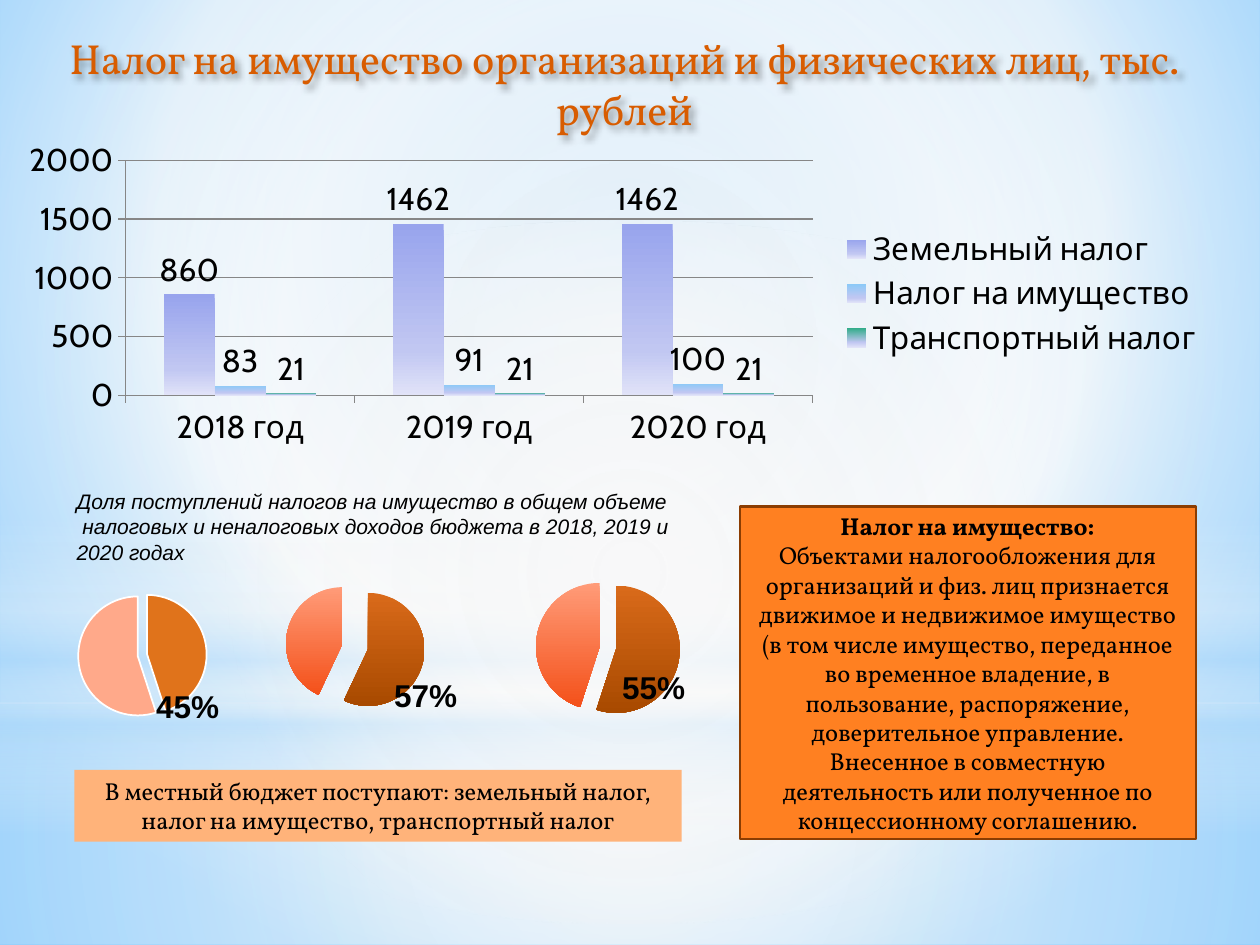
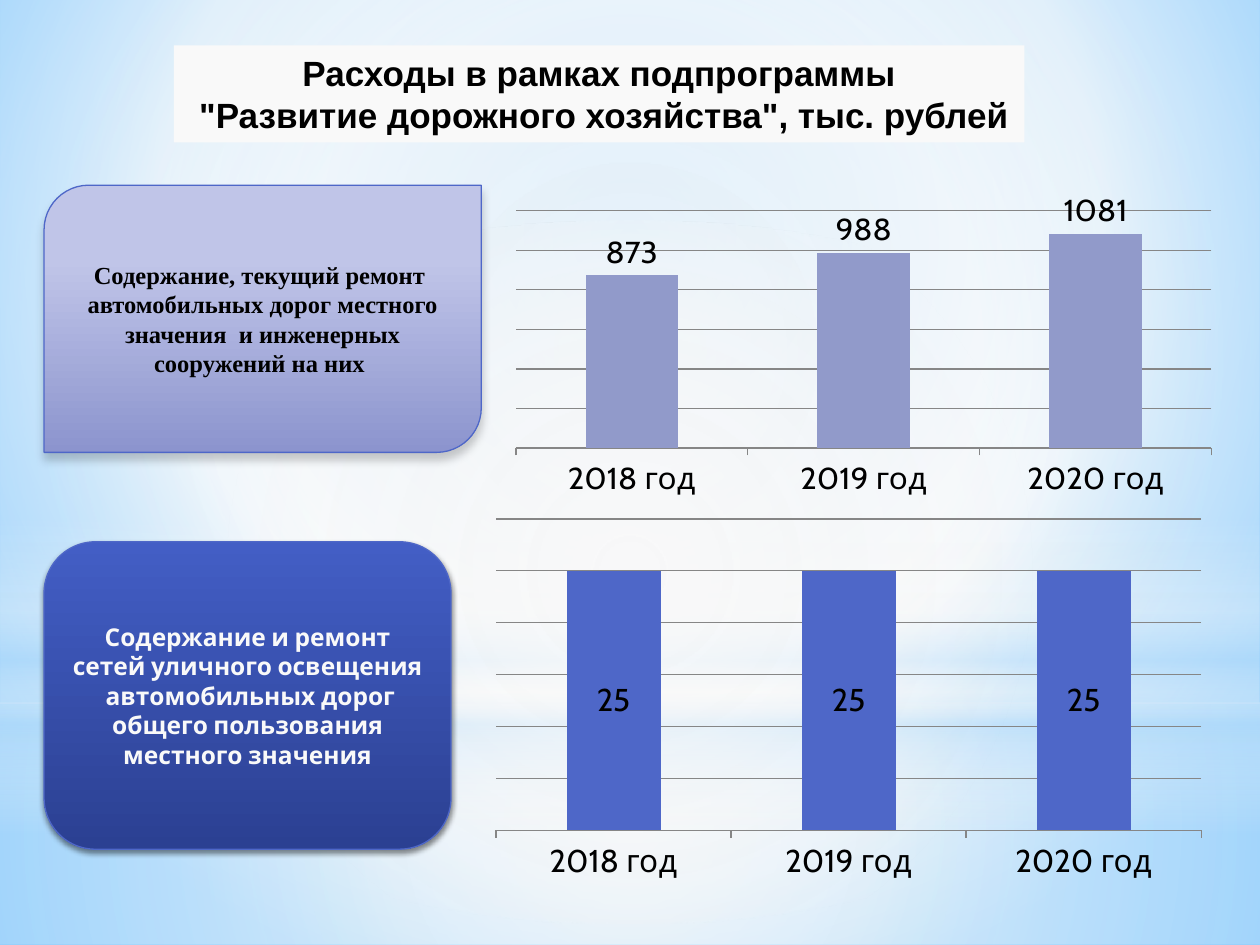
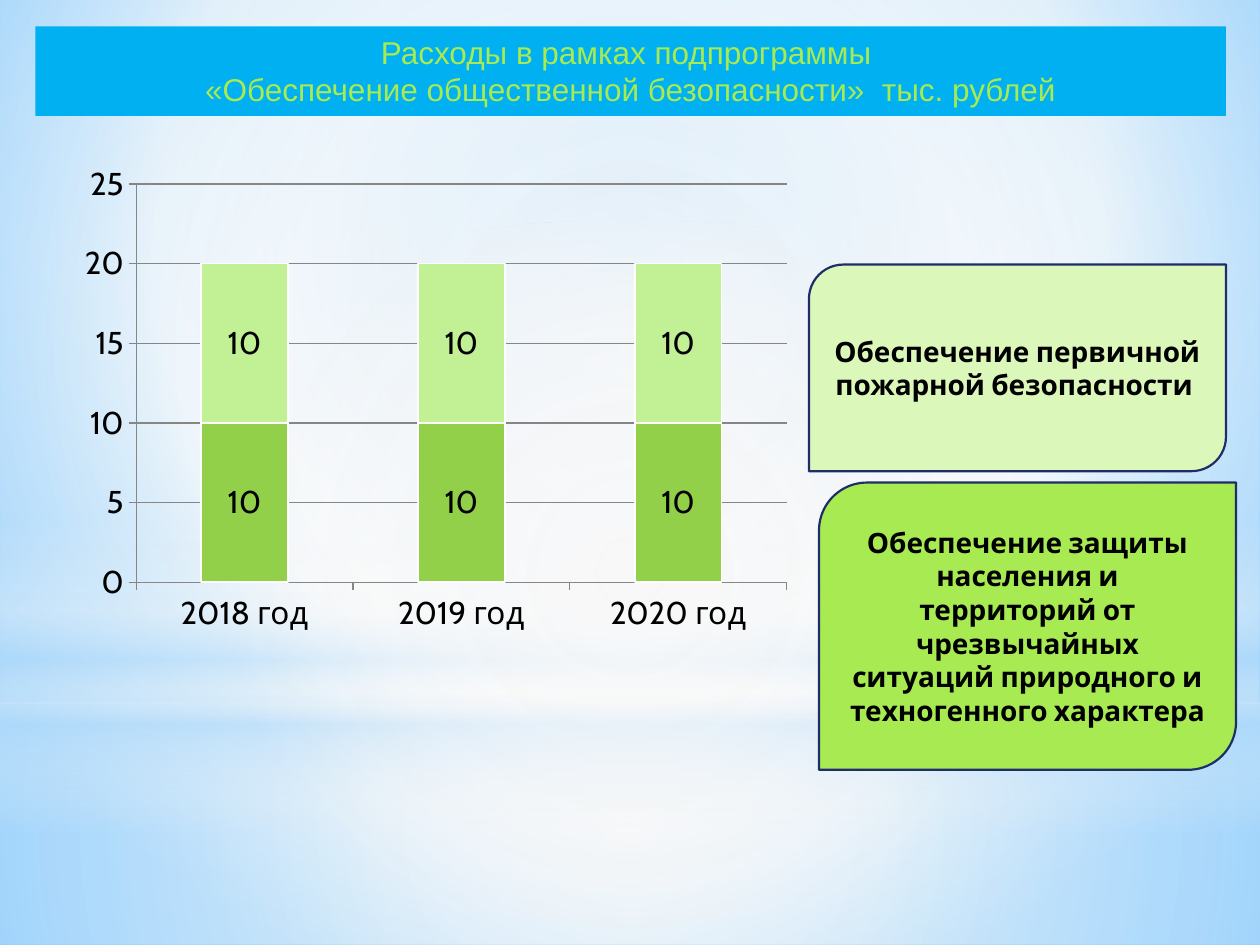
"""Build three budget slides about taxes, roads and public safety."""
from lxml import etree
from pptx import Presentation
from pptx.chart.data import CategoryChartData
from pptx.dml.color import RGBColor
from pptx.enum.chart import XL_CHART_TYPE, XL_LABEL_POSITION, XL_LEGEND_POSITION, XL_TICK_LABEL_POSITION, XL_TICK_MARK
from pptx.enum.shapes import MSO_SHAPE
from pptx.enum.text import MSO_ANCHOR, PP_ALIGN
from pptx.oxml.ns import qn
from pptx.util import Inches, Pt

RECTANGLE = MSO_SHAPE.RECTANGLE
ELLIPSE = MSO_SHAPE.OVAL
ROUNDED = MSO_SHAPE.ROUNDED_RECTANGLE
LEAF = MSO_SHAPE.ROUND_2_DIAG_RECTANGLE
CLUSTERED = XL_CHART_TYPE.COLUMN_CLUSTERED
STACKED = XL_CHART_TYPE.COLUMN_STACKED
PIE = XL_CHART_TYPE.PIE
LABEL_ABOVE = XL_LABEL_POSITION.OUTSIDE_END
LABEL_CENTER = XL_LABEL_POSITION.CENTER
LEGEND_RIGHT = XL_LEGEND_POSITION.RIGHT
TICK_OUTSIDE = XL_TICK_MARK.OUTSIDE
TICK_NONE = XL_TICK_MARK.NONE
LABELS_LOW = XL_TICK_LABEL_POSITION.LOW
TOP, MIDDLE = MSO_ANCHOR.TOP, MSO_ANCHOR.MIDDLE
LEFT, CENTER = PP_ALIGN.LEFT, PP_ALIGN.CENTER

COLUMNS, ROWS, CELL = 100, 75, 0.1
BLACK, PAPER, SKY, GRID_GRAY = "000000", "F9F9F9", "B4DCFA", "868686"
BLUE, NAVY, LIME = "4E67C8", "1F2E69", "A7EA52"
YEARS = ["2018 год", "2019 год", "2020 год"]
MIDDLE_FOCUS = (50, 50, 50, 50)


def cells(*lengths):
    """Convert grid cells to slide lengths."""
    return [Inches(length * CELL) for length in lengths]


def rgb(color):
    """Return the colour of a hex string."""
    return RGBColor.from_string(color)


def gradient(*stops, focus=None):
    """Describe a downward gradient, or a circular one around a focus."""
    return {"stops": stops, "focus": focus}


def paint(fill, color):
    """Apply no fill, a plain colour or a gradient."""
    if color is None:
        fill.background()
    elif isinstance(color, str):
        fill.solid()
        fill.fore_color.rgb = rgb(color)
    else:
        fill.gradient()
        paint_gradient(fill._xPr.find(qn("a:gradFill")), **color)


def paint_gradient(element, stops, focus):
    """Write the stops and the direction of a gradient."""
    for child in list(element):
        element.remove(child)
    stop_list = etree.SubElement(element, qn("a:gsLst"))
    for position, color, *opacity in stops:
        stop = etree.SubElement(stop_list, qn("a:gs"), pos=str(position * 1000))
        add_color(stop, color, *opacity)
    if focus:
        route = etree.SubElement(element, qn("a:path"), {"path": "circle"})
        sides = {side: str(share * 1000) for side, share in zip("ltrb", focus)}
        etree.SubElement(route, qn("a:fillToRect"), sides)
    else:
        etree.SubElement(element, qn("a:lin"), ang="5400000", scaled="0")


def add_color(parent, color, opacity=100):
    """Add a colour with its opacity in percent."""
    element = etree.SubElement(parent, qn("a:srgbClr"), val=color)
    if opacity < 100:
        etree.SubElement(element, qn("a:alpha"), val=str(opacity * 1000))


def add_shadow(shape, opacity, blur, distance, angle=90):
    """Give a shape an outer shadow."""
    effects = shape.element.spPr.find(qn("a:effectLst"))
    shadow = etree.SubElement(
        effects, qn("a:outerShdw"), blurRad=str(Pt(blur)), dist=str(Pt(distance)),
        dir=str(angle * 60000), algn="ctr", rotWithShape="0")
    add_color(shadow, BLACK, opacity)


def outline(line, color, width):
    """Set the colour and width of a line."""
    paint(line.fill, color)
    if color:
        line.width = Pt(width)


def add_box(slide, place, kind=RECTANGLE, fill=None, line=None, width=1.25):
    """Add a preset shape without a shadow."""
    shape = slide.shapes.add_shape(kind, *cells(*place))
    shape.shadow.inherit = False
    paint(shape.fill, fill)
    outline(shape.line, line, width)
    return shape


def write(shape, lines, size, font, color=BLACK, bold=False, italic=False,
          align=CENTER, anchor=TOP, wrap=True):
    """Fill a shape with paragraphs of one style."""
    frame = shape.text_frame
    frame.word_wrap = wrap
    frame.vertical_anchor = anchor
    frame.text = "\n".join(lines)
    for paragraph in frame.paragraphs:
        paragraph.alignment = align
        paragraph.font.size = Pt(size)
        paragraph.font.name = font
        paragraph.font.bold = bold
        paragraph.font.italic = italic
        paragraph.font.color.rgb = rgb(color)


def add_text(slide, place, lines, size, font, **style):
    """Add a text box."""
    box = slide.shapes.add_textbox(*cells(*place))
    box.shadow.inherit = False
    write(box, lines, size, font, **style)
    return box


def add_base_chart(slide, place, kind, categories, series):
    """Add a chart with the shared font."""
    data = CategoryChartData()
    data.categories = categories
    for name, values in series:
        data.add_series(name, values)
    chart = slide.shapes.add_chart(kind, *cells(*place), data).chart
    chart.has_title = False
    chart.has_legend = False
    chart.font.size = Pt(18)
    chart.font.name = "Cabin"
    chart.font.color.rgb = rgb(BLACK)
    return chart


def place_plot(chart, *shares):
    """Fix the inner plot area as shares of the chart."""
    area = chart._chartSpace.find(".//" + qn("c:plotArea"))
    for old_layout in area.findall(qn("c:layout")):
        area.remove(old_layout)
    layout = etree.Element(qn("c:layout"))
    area.insert(0, layout)
    manual = etree.SubElement(layout, qn("c:manualLayout"))
    settings = [("layoutTarget", "inner"), ("xMode", "edge"), ("yMode", "edge")]
    settings += zip("xywh", map(str, shares))
    for name, value in settings:
        etree.SubElement(manual, qn("c:" + name), val=value)


def add_columns(slide, place, kind, series, colors, top, step,
                scale=True, edge=None):
    """Add a column chart with yearly values."""
    chart = add_base_chart(slide, place, kind, YEARS, series)
    plot = chart.plots[0]
    plot.vary_by_categories = False
    plot.gap_width = 150
    plot.overlap = 100 if kind == STACKED else 0
    plot.has_data_labels = True
    plot.data_labels.show_value = True
    plot.data_labels.position = LABEL_CENTER if kind == STACKED else LABEL_ABOVE
    for bars, color in zip(plot.series, colors):
        paint(bars.format.fill, color)
        outline(bars.format.line, edge, 1)
    values = chart.value_axis
    values.minimum_scale, values.maximum_scale, values.major_unit = 0, top, step
    values.visible = scale
    values.has_major_gridlines = True
    outline(values.major_gridlines.format.line, GRID_GRAY, 0.75)
    chart.category_axis.tick_label_position = LABELS_LOW
    for axis in (chart.category_axis, values):
        axis.major_tick_mark = TICK_OUTSIDE
        axis.minor_tick_mark = TICK_NONE
        outline(axis.format.line, GRID_GRAY, 0.75)
    return chart


def add_share_pie(slide, place, plot_area, percent, explosion, colors, edge, label_place):
    """Add an exploded pie with its percentage."""
    chart = add_base_chart(slide, place, PIE, ["1", "2"], [("Доля", (percent, 100 - percent))])
    place_plot(chart, *plot_area)
    series = chart.plots[0].series[0]
    for index, color in enumerate(colors):
        point = series.points[index]
        paint(point.format.fill, color)
        outline(point.format.line, edge, 1)
    element = etree.Element(qn("c:explosion"), val=str(explosion))
    series._element.find(qn("c:dPt")).addprevious(element)
    add_text(slide, label_place, [f"{percent}%"], 18, "Arial", bold=True, align=LEFT)


def add_slide(presentation):
    """Add a blank slide with the sky backdrop."""
    slide = presentation.slides.add_slide(presentation.slide_layouts[6])
    paint(slide.background.fill, gradient(
        (0, "9ED5FF"), (60, "FFFFFF"), (100, "5BB9FF"), focus=(20, 10, 20, 60)))
    horizon = 55.8
    add_box(slide, (0, horizon, COLUMNS, ROWS - horizon), fill=gradient(
        (0, PAPER, 91), (37, PAPER, 76), (100, SKY, 79), focus=MIDDLE_FOCUS))
    add_box(slide, (0, 0, COLUMNS, horizon), fill=gradient(
        (0, PAPER, 89), (48, PAPER, 62), (100, SKY, 79), focus=MIDDLE_FOCUS))
    add_box(slide, (0, 41.2, COLUMNS, 25), fill=gradient(
        (0, PAPER, 0), (29, PAPER, 30), (45, SKY, 40),
        (55, PAPER, 26), (65, SKY, 60), (100, PAPER, 0)))
    add_box(slide, (0, 17.5, COLUMNS, horizon), ELLIPSE, gradient(
        (0, PAPER), (56, PAPER, 0), focus=MIDDLE_FOCUS))
    return slide


def build_property_tax(presentation):
    """Build the slide about property tax."""
    slide = add_slide(presentation)
    title = add_text(slide, (2.7, 2.1, 93.7, 9.1),
                     ["Налог на имущество организаций и физических лиц, тыс. рублей"],
                     24, "Vollkorn", color="D85C00")
    add_shadow(title, 40, 4, 3, 45)

    taxes = [("Земельный налог", (860, 1462, 1462)),
             ("Налог на имущество", (83, 91, 100)),
             ("Транспортный налог", (21, 21, 21))]
    colors = [gradient((0, color), (74, "C1C7F2"), (100, "E1E3F8"))
              for color in ("98A4ED", "8CC9F7", "34AC8B")]
    chart = add_columns(slide, (0.4, 10.7, 96.1, 25.2), CLUSTERED, taxes, colors, 2000, 500)
    chart.has_legend = True
    chart.legend.position = LEGEND_RIGHT
    chart.legend.include_in_layout = False

    add_text(slide, (5.1, 38.3, 50.4, 7.1),
             ["Доля поступлений налогов на имущество в общем объеме",
              " налоговых и неналоговых доходов бюджета в 2018, 2019 и 2020 годах"],
             12, "Arial", italic=True, align=LEFT)
    flat = ("E0731B", "FFA98A")
    shaded = (gradient((0, "D96A1A"), (100, "A84A00")),
              gradient((0, "FF9B78"), (100, "F4511A")))
    pies = [
        ((1.2, 46.9, 18.9, 12.3), (0.18, 0, 0.71, 0.83), 45, 8, flat, "FFFFFF", (11.4, 54, 10.7, 4)),
        ((20.3, 45.8, 19.5, 13.8), (0.12, 0, 0.57, 0.8), 57, 23, shaded, None, (30.3, 53.2, 10.7, 4)),
        ((38.6, 45.7, 19.7, 14.5), (0.2, 0, 0.58, 0.79), 55, 13, shaded, None, (48.4, 52.5, 11.4, 4)),
    ]
    for pie in pies:
        add_share_pie(slide, *pie)

    note = add_box(slide, (58.7, 40.2, 36.2, 26.4), fill="FF8021", line="8B3D02")
    write(note, ["Налог на имущество:",
                 "Объектами налогообложения для организаций и физ. лиц признается движимое и "
                 "недвижимое имущество (в том числе имущество, переданное во временное владение, "
                 "в пользование, распоряжение, доверительное управление. Внесенное в совместную "
                 "деятельность или полученное по концессионному соглашению."],
          14, "Vollkorn", anchor=MIDDLE)
    note.text_frame.paragraphs[0].font.bold = True
    local_budget = add_box(slide, (5.9, 61.1, 48.2, 5.7), fill="FFB37A")
    write(local_budget, ["В местный бюджет поступают: земельный налог, "
                         "налог на имущество, транспортный налог"], 14, "Vollkorn")


def build_roads(presentation):
    """Build the slide about road spending."""
    slide = add_slide(presentation)
    title = add_box(slide, (13.8, 3.6, 67.5, 7.7), fill=PAPER)
    write(title, ["Расходы в рамках подпрограммы",
                  " \"Развитие дорожного хозяйства\", тыс. рублей"],
          20, "Arial", bold=True, wrap=False)

    repair = add_box(slide, (3.5, 14.7, 34.7, 21.2), LEAF,
                     gradient((28, "C0C5E8"), (100, "8C94CE")), BLUE, 0.75)
    add_shadow(repair, 20, 5, 4)
    write(repair, ["Содержание, текущий ремонт  автомобильных дорог местного значения  "
                   "и инженерных сооружений на них "],
          14, "Times New Roman", bold=True, anchor=MIDDLE)
    add_columns(slide, (39.8, 15.3, 57.5, 24.6), CLUSTERED,
                [("Ремонт дорог", (873, 988, 1081))], ["919ACA"], 1200, 200, scale=False)

    lighting = add_box(slide, (3.5, 43, 32.3, 24.4), ROUNDED,
                       gradient((0, "435EC5"), (100, "2B4092")), BLUE, 0.75)
    add_shadow(lighting, 45, 3.1, 1.8)
    write(lighting, ["Содержание и ремонт сетей уличного освещения  автомобильных дорог "
                     "общего пользования местного значения"],
          14, "Cabin", color=PAPER, bold=True, anchor=MIDDLE)
    add_columns(slide, (38.2, 40.6, 58.3, 29.9), STACKED,
                [("Освещение", (25, 25, 25))], [BLUE], 30, 5, scale=False)


def build_safety(presentation):
    """Build the slide about public safety spending."""
    slide = add_slide(presentation)
    title = add_box(slide, (2.8, 2.1, 94.5, 7.1), fill="00B0F0")
    write(title, ["Расходы в рамках подпрограммы ",
                  "«Обеспечение общественной безопасности»  тыс. рублей"],
          18, "Arial", color=LIME)
    chart = add_columns(slide, (2.1, 12.3, 62.2, 57.5), STACKED,
                        [("Защита населения", (10, 10, 10)), ("Пожарная безопасность", (10, 10, 10))],
                        ["92D04A", "C2F094"], 25, 5, edge="FFFFFF")
    place_plot(chart, 0.14, 0.04, 0.83, 0.55)
    goals = [
        ((65, 38.3, 33.1, 22.8), LIME, "Обеспечение защиты населения и территорий от чрезвычайных "
                                       "ситуаций природного и техногенного характера"),
        ((64.2, 21, 33.1, 16.4), "DCF7BA", "Обеспечение первичной пожарной безопасности "),
    ]
    for place, color, text in goals:
        goal = add_box(slide, place, LEAF, color, NAVY)
        write(goal, [text], 16, "Cabin", bold=True, anchor=MIDDLE)


def main():
    """Build and save the presentation."""
    presentation = Presentation()
    presentation.slide_width, presentation.slide_height = cells(COLUMNS, ROWS)
    build_property_tax(presentation)
    build_roads(presentation)
    build_safety(presentation)
    presentation.save("out.pptx")


if __name__ == "__main__":
    main()
